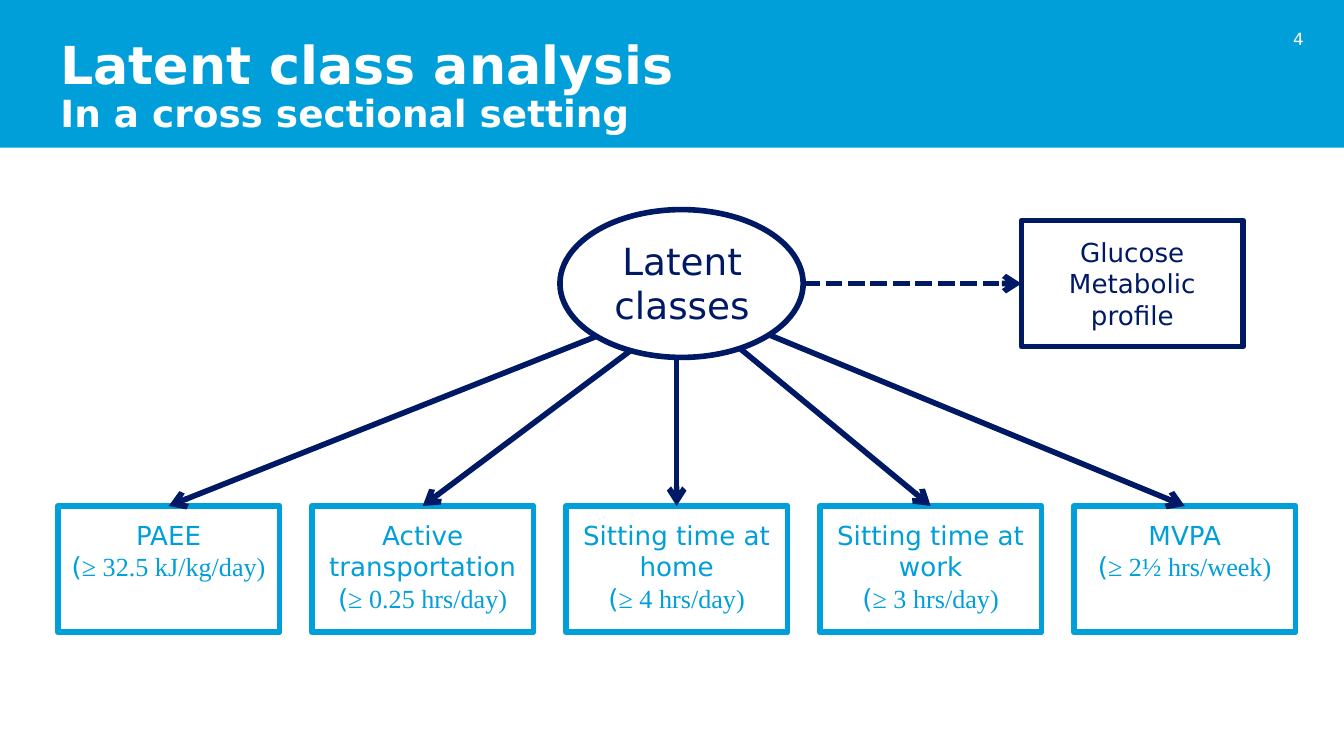
from math import sqrt
from pptx import Presentation
from pptx.util import Inches, Pt
from pptx.dml.color import RGBColor as RGB
from pptx.enum.dml import MSO_LINE as Dash
from pptx.enum.shapes import MSO_SHAPE as Shape, MSO_CONNECTOR as Link
from pptx.enum.text import PP_ALIGN as Align, MSO_ANCHOR as Anchor, MSO_AUTO_SIZE as Fit
from pptx.oxml.ns import qn
from lxml.etree import SubElement as sub

HUES = {"sky": "009FDA", "navy": "001965", "white": "FFFFFF"}
SANS, SERIF = "DejaVu Sans", "Times New Roman"
COLS, ROWS = 100, 56.25  # grid of square cells, ten to the inch
CARD = (16.5, 9.4)  # width and height of every card


def cell(n):
    return Inches(n / 10)


def hue(name):
    return RGB.from_string(HUES[name])


def put(slide, box, paras, size=14, color="navy", bold=False, align=Align.CENTER,
        anchor=Anchor.TOP, flat=False, space=None):
    """Each paragraph is a list of (text, font, size) runs or plain strings."""
    area = slide.shapes.add_textbox(*map(cell, box))
    frame = area.text_frame
    frame.word_wrap = True
    frame.vertical_anchor = anchor
    if flat:
        frame.margin_left = frame.margin_right = frame.margin_top = frame.margin_bottom = 0
    else:
        frame.auto_size = Fit.SHAPE_TO_FIT_TEXT
    for i, runs in enumerate(paras):
        para = frame.paragraphs[0] if i == 0 else frame.add_paragraph()
        para.alignment = align
        if space:
            para.line_spacing = space
        for part in runs:
            text, face, pts = (part, SANS, size) if isinstance(part, str) else part
            if text == "\n":
                para.add_line_break()
                continue
            run = para.add_run()
            run.text = text
            font = run.font
            font.name, font.size, font.bold = face, Pt(pts), bold
            font.color.rgb = hue(color)


def draw(slide, kind, box, line=None, fill=None):
    shape = slide.shapes.add_shape(kind, *map(cell, box))
    shape.shadow.inherit = False
    if fill:
        shape.fill.solid()
        shape.fill.fore_color.rgb = hue(fill)
    else:
        shape.fill.background()
    if line:
        shape.line.color.rgb = hue(line)
        shape.line.width = Pt(3)
    else:
        shape.line.fill.background()


def arrow(slide, start, end, dash=None):
    link = slide.shapes.add_connector(Link.STRAIGHT, *map(cell, (*start, *end)))
    link.line.color.rgb = hue("navy")
    link.line.width = Pt(3)
    if dash:
        link.line.dash_style = dash
    props = link._element.spPr
    sub(props.find(qn("a:ln")), qn("a:tailEnd"), type="arrow")
    sub(props, qn("a:effectLst"))


def header(slide, box):
    x, y, w, h = box
    draw(slide, Shape.RECTANGLE, box, fill="sky")
    title = ["Latent class analysis", "\n", ("In a cross sectional setting", SANS, 20)]
    put(slide, (x + 4.5, y + 3.75, 91.1, h / 2), [title], size=28, color="white",
        bold=True, align=Align.LEFT, anchor=Anchor.MIDDLE, flat=True, space=0.9)
    put(slide, (x + w - 6.1, y + 2.1, 3.1, 1.6), [["4"]], size=9, color="white",
        align=Align.RIGHT, anchor=Anchor.MIDDLE, flat=True)


def card(slide, box, paras, color, drop=0.5):
    x, y, w, h = box
    draw(slide, Shape.RECTANGLE, box, line=color)
    put(slide, (x - 0.8, y + drop, w + 1.6, h - 1.3), paras, color=color)


def hub(slide, box):
    x, y, w, h = box
    draw(slide, Shape.OVAL, box, line="navy")
    put(slide, (x + 1.6, y + 1.6, 15, 7.7), [["Latent classes"]], size=20)


def model(slide, box):
    x, y, w, h = box
    oval = ox, oy, ow, oh = x + 37.36, y, 18.1, 11

    # Outcome to the right of the latent classes
    lines = [["Glucose"], ["Metabolic"], ["profile"]]
    card(slide, (x + 71.7, y + 0.8, *CARD), lines, "navy", drop=0.7)
    mid = y + oh / 2
    arrow(slide, (ox + ow, mid), (x + 71.7, mid), Dash.SQUARE_DOT)

    # Indicators: name, limit, share of the oval's width where the arrow leaves
    items = [
        ("PAEE", "≥ 32.5 kJ/kg/day)", 0.15),
        ("Active transportation", "≥ 0.25 hrs/day)", 0.29),
        ("Sitting time at home", "≥ 4 hrs/day)", 0.48),
        ("Sitting time at work", "≥ 3 hrs/day)", 0.74),
        ("MVPA", "≥ 2½ hrs/week)", 0.86),
    ]
    step = (w - CARD[0]) / (len(items) - 1)
    top = y + h - CARD[1]
    for i, (name, limit, part) in enumerate(items):
        left = x + i * step
        paras = [[name], ["(", (limit, SERIF, 14)]]
        card(slide, (left, top, *CARD), paras, "sky")
        edge = 0.5 + sqrt(0.25 - (part - 0.5) ** 2)  # lower rim of the oval
        arrow(slide, (ox + part * ow, oy + edge * oh), (left + CARD[0] / 2, top))

    hub(slide, oval)


def main():
    deck = Presentation()
    deck.slide_width, deck.slide_height = cell(COLS), cell(ROWS)
    slide = deck.slides.add_slide(deck.slide_layouts[6])
    header(slide, (0, 0, COLS, 11))
    model(slide, (4.3, 15.6, 92.1, 31.45))
    deck.save("out.pptx")


if __name__ == "__main__":
    main()
